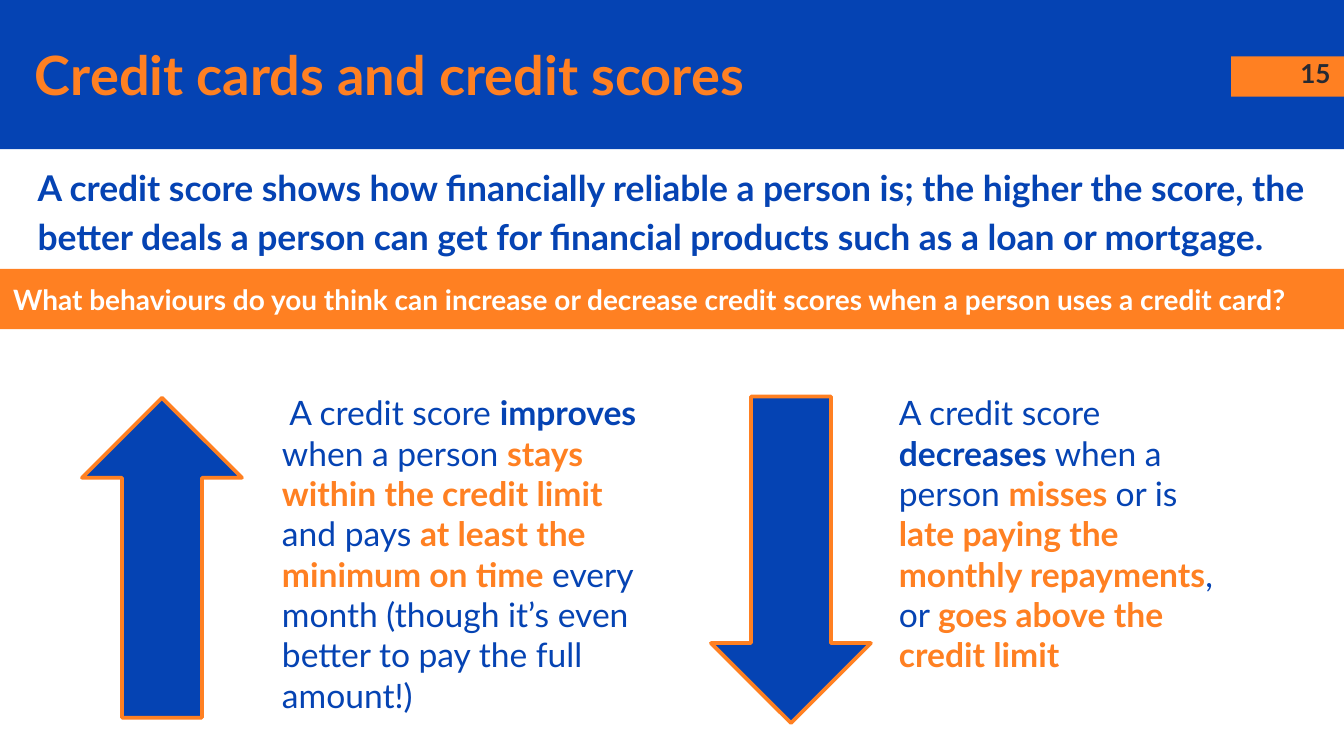
from dataclasses import dataclass

from pptx import Presentation
from pptx.dml.color import RGBColor as Rgb
from pptx.enum.shapes import MSO_SHAPE as Kind
from pptx.enum.text import MSO_ANCHOR as Anchor, MSO_AUTO_SIZE as Fit, PP_ALIGN as Align
from pptx.util import Inches, Pt


@dataclass(frozen=True)
class Theme:
    font: str = "Lato"
    blue: str = "0543B3"
    orange: str = "FF8022"
    dark: str = "262A33"
    white: str = "FFFFFF"
    title: int = 29
    lead: int = 19
    body: int = 18
    ask: int = 15
    page: int = 14


@dataclass(frozen=True)
class Run:
    text: str
    color: str
    bold: bool = False


@dataclass(frozen=True)
class Box:
    left: float
    top: float
    width: float
    height: float

    def lengths(self) -> tuple:
        return tuple(map(Inches, (self.left, self.top, self.width, self.height)))


@dataclass(frozen=True)
class Effect:
    arrow: Box
    turn: int
    note: Box
    runs: tuple


THEME = Theme()


def plain(text: str) -> Run:
    return Run(text, THEME.blue)


def strong(text: str) -> Run:
    return Run(text, THEME.blue, True)


def key(text: str) -> Run:
    return Run(text, THEME.orange, True)


EFFECTS = (
    Effect(Box(0.61, 2.96, 1.19, 2.38), 0, Box(2, 2.87, 2.94, 2.52), (
        plain(" A credit score "), strong("improves "), plain("when a person "),
        key("stays within the credit limit"), plain(" and pays "),
        key("at least the minimum on time"),
        plain(" every month (though it’s even better to pay the full amount!)"),
    )),
    Effect(Box(5.29, 2.95, 1.19, 2.43), 180, Box(6.59, 2.87, 2.74, 1.92), (
        plain("A credit score "), strong("decreases "), plain("when a person "),
        key("misses "), plain("or is "), key("late paying the monthly repayments"),
        plain(", or "), key("goes above the credit limit"),
    )),
)


def write(shape, *runs: Run, size: int, align=Align.LEFT, anchor=Anchor.TOP,
          inset: float = 0.1, left: float = 0.1, lines: float = 1.0) -> None:
    """Fill a shape with one paragraph of formatted runs."""
    frame = shape.text_frame
    frame.word_wrap = True
    frame.auto_size = Fit.NONE
    frame.vertical_anchor = anchor
    frame.margin_left, frame.margin_right = Inches(left), Inches(0.1)
    frame.margin_top = frame.margin_bottom = Inches(inset)
    para = frame.paragraphs[0]
    para.alignment = align
    para.line_spacing = lines
    for item in runs:
        run = para.add_run()
        run.text = item.text
        font = run.font
        font.name, font.size, font.bold = THEME.font, Pt(size), item.bold
        font.color.rgb = Rgb.from_string(item.color)


def draw(slide, kind: Kind, box: Box, fill: str, line: str = ""):
    """Add a flat shape, outlined only when a line colour is given."""
    shape = slide.shapes.add_shape(kind, *box.lengths())
    shape.shadow.inherit = False
    shape.fill.solid()
    shape.fill.fore_color.rgb = Rgb.from_string(fill)
    if line:
        shape.line.color.rgb = Rgb.from_string(line)
        shape.line.width = Pt(2)
    else:
        shape.line.fill.background()
    return shape


def add_text(slide, box: Box, *runs: Run, **form) -> None:
    write(slide.shapes.add_textbox(*box.lengths()), *runs, **form)


def add_effect(slide, effect: Effect) -> None:
    arrow = draw(slide, Kind.UP_ARROW, effect.arrow, THEME.blue, THEME.orange)
    arrow.rotation = effect.turn
    add_text(slide, effect.note, *effect.runs, size=THEME.body, inset=0.05)


def main() -> None:
    # Widescreen page, 16 to 9
    deck = Presentation()
    deck.slide_width, deck.slide_height = Inches(10), Inches(10 * 9 / 16)
    slide = deck.slides.add_slide(deck.slide_layouts[5])

    # Header band and page number
    draw(slide, Kind.RECTANGLE, Box(0, 0, 10, 1.11), THEME.blue)
    draw(slide, Kind.RECTANGLE, Box(9.16, 0.42, 0.84, 0.3), THEME.orange)
    add_text(slide, Box(9.4, 0.33, 0.6, 0.43), Run("15", THEME.dark, True),
             size=THEME.page, align=Align.RIGHT)

    # Title, brought in front of the band
    title = slide.shapes.title
    title.left, title.top, title.width, title.height = Box(0.16, 0.27, 8.46, 0.56).lengths()
    write(title, key("Credit cards and credit scores"), size=THEME.title,
          anchor=Anchor.MIDDLE)
    slide.shapes.element.append(title.element)

    # Definition
    add_text(slide, Box(0.07, 1.09, 9.84, 1.26), strong(
        "A credit score shows how financially reliable a person is; the higher the score, "
        "the better deals a person can get for financial products such as a loan or mortgage."),
        size=THEME.lead, left=0.21, lines=1.15)

    # Ways the score moves
    for effect in EFFECTS:
        add_effect(slide, effect)

    # Question band
    band = draw(slide, Kind.RECTANGLE, Box(0, 2, 10, 0.45), THEME.orange)
    write(band, Run("What behaviours do you think can increase or decrease credit scores "
                    "when a person uses a credit card?", THEME.white, True), size=THEME.ask)

    deck.save("out.pptx")


if __name__ == "__main__":
    main()
